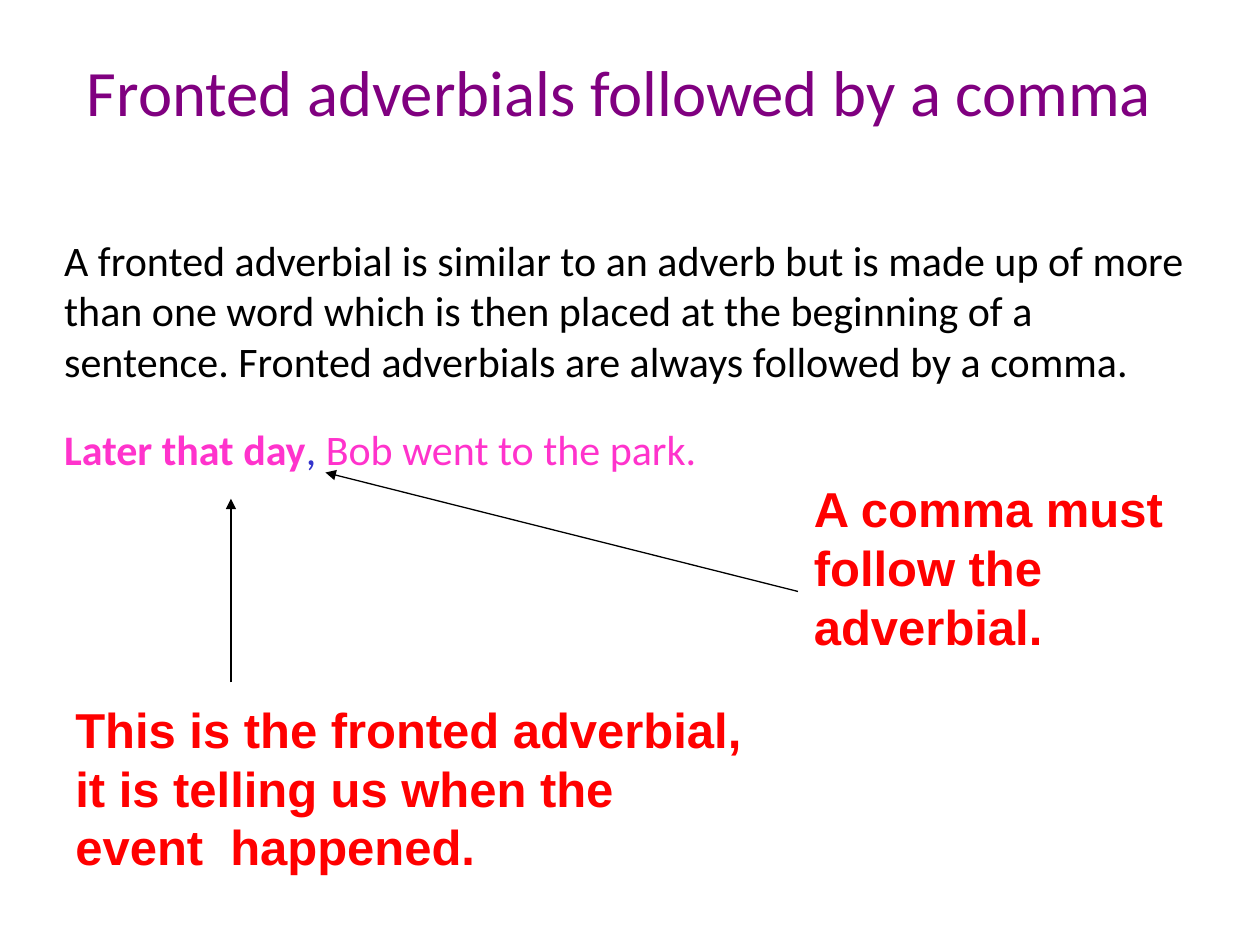
from pptx import Presentation
from pptx.dml.color import RGBColor
from pptx.enum.shapes import MSO_CONNECTOR
from pptx.enum.text import MSO_ANCHOR, PP_ALIGN
from pptx.oxml.ns import qn
from pptx.util import Pt
from lxml import etree

PURPLE = RGBColor(0x80, 0x00, 0x80)
BLACK = RGBColor(0x00, 0x00, 0x00)
PINK = RGBColor(0xFF, 0x33, 0xCC)
BLUE = RGBColor(0x33, 0x33, 0xCC)
RED = RGBColor(0xFF, 0x00, 0x00)


def add_text(paragraph, text, size=24, font="Calibri", color=BLACK, bold=False):
    run = paragraph.add_run()
    run.text = text
    run.font.size = Pt(size)
    run.font.name = font
    run.font.color.rgb = color
    run.font.bold = bold


presentation = Presentation()
presentation.slide_width, presentation.slide_height = Pt(720), Pt(540)
slide = presentation.slides.add_slide(presentation.slide_layouts[5])

# Title
title = slide.shapes.title
title.left, title.top, title.width, title.height = Pt(42.5), Pt(26), Pt(648), Pt(90)
title.text_frame.vertical_anchor = MSO_ANCHOR.TOP
heading = title.text_frame.paragraphs[0]
heading.alignment = PP_ALIGN.LEFT
add_text(heading, "Fronted adverbials followed by a comma", size=37, color=PURPLE)

# Definition and example sentence
explanation = slide.shapes.add_textbox(Pt(36.7), Pt(134), Pt(648), Pt(138)).text_frame
explanation.word_wrap = True
explanation.margin_left = explanation.margin_right = 0
explanation.margin_top = explanation.margin_bottom = 0
definition = explanation.paragraphs[0]
add_text(definition, "A fronted adverbial is similar to an adverb but is made up of more "
         "than one word which is then placed at the beginning of a sentence. "
         "Fronted adverbials are always followed by a comma.")
example = explanation.add_paragraph()
example.space_before = Pt(21.5)
add_text(example, "Later that day", color=PINK, bold=True)
add_text(example, ",", color=BLUE)
add_text(example, " Bob went to the park.", color=PINK)

# Red notes
notes = [
    (36, 396, 402, "This is the fronted adverbial, it is telling us when the event  happened."),
    (458, 270, 234, "A comma must follow the adverbial."),
]
for left, top, width, wording in notes:
    note = slide.shapes.add_textbox(Pt(left), Pt(top), Pt(width), Pt(109)).text_frame
    note.word_wrap = True
    add_text(note.paragraphs[0], wording, size=28, font="Arial", color=RED, bold=True)

# Arrows from the notes to the example sentence
for start_x, start_y, end_x, end_y in [(132, 390, 132, 285), (456, 338, 186, 270)]:
    arrow = slide.shapes.add_connector(
        MSO_CONNECTOR.STRAIGHT, Pt(start_x), Pt(start_y), Pt(end_x), Pt(end_y))
    arrow.line.color.rgb = BLACK
    arrow.line.width = Pt(0.75)
    etree.SubElement(arrow.line._get_or_add_ln(), qn("a:tailEnd"), type="triangle")
    etree.SubElement(arrow._element.spPr, qn("a:effectLst"))

presentation.save("out.pptx")
